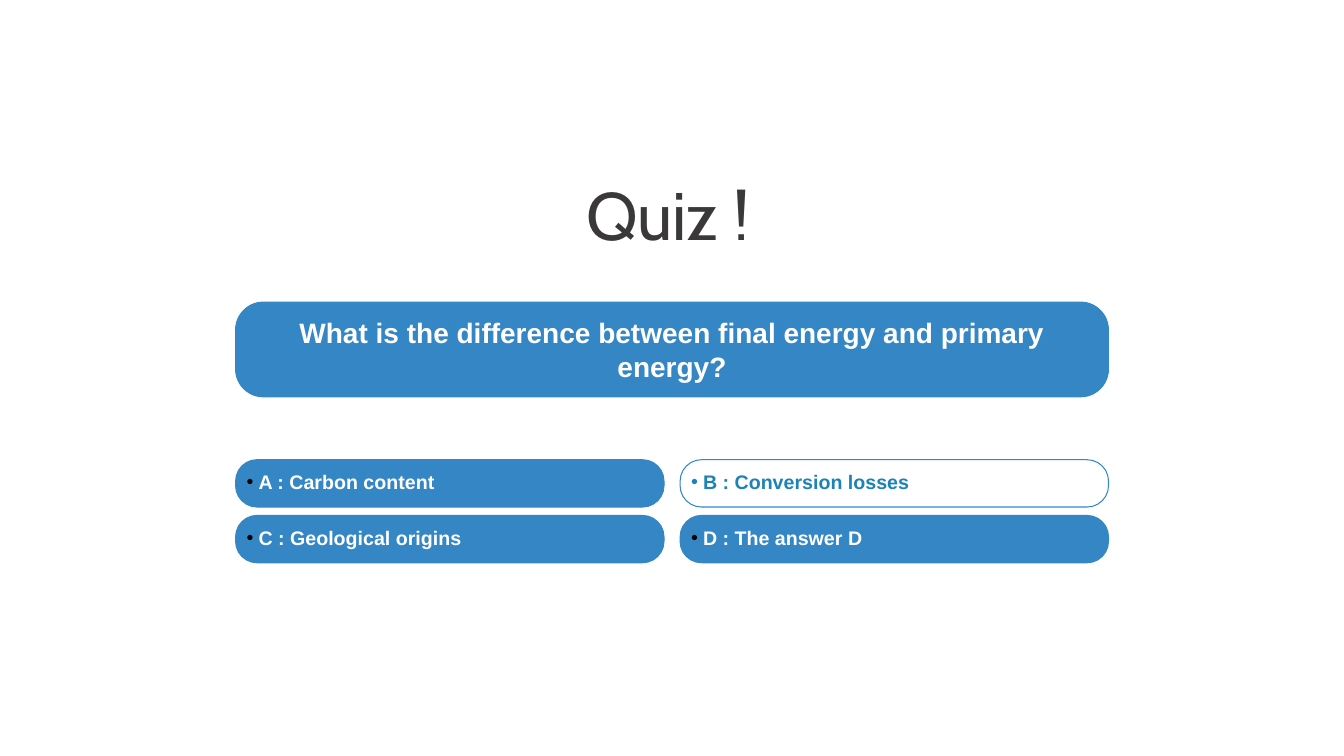
from lxml import etree
from pptx import Presentation
from pptx.dml.color import RGBColor
from pptx.enum.shapes import MSO_SHAPE
from pptx.enum.text import MSO_ANCHOR, PP_ALIGN
from pptx.oxml.ns import qn
from pptx.util import Pt

ROUNDED = MSO_SHAPE.ROUNDED_RECTANGLE
MIDDLE, CENTER = MSO_ANCHOR.MIDDLE, PP_ALIGN.CENTER

TITLE = "Quiz !"
QUESTION = "What is the difference between final energy and primary energy?"
ANSWERS = [
    ["A : Carbon content", "B : Conversion losses"],
    ["C : Geological origins", "D : The answer D"],
]
CORRECT = "B : Conversion losses"

BLUE, DEEP_BLUE, WHITE, BLACK, GREY = "3486C5", "1C82B8", "FFFFFF", "000000", "3A3838"

# All lengths are in points
LEFT, WIDTH = 168.3, 623.5
TITLE_LEFT, TITLE_TOP, TITLE_HEIGHT = 165.5, 113.8, 77
QUESTION_TOP, QUESTION_HEIGHT = 215.8, 67.7
ANSWERS_TOP, ANSWER_WIDTH, ANSWER_HEIGHT = 328.4, 306, 33.8
COLUMN_STEP, ROW_STEP = 317.5, 39.8
LABEL_DX, LABEL_DY, LABEL_WIDTH, LABEL_HEIGHT = 0.8, 3.8, 294, 28.8
BULLET_INDENT = 8.5


def color(hex_code):
    return RGBColor.from_string(hex_code)


def add_panel(slide, box, fill, rounding):
    panel = slide.shapes.add_shape(ROUNDED, *map(Pt, box))
    panel.adjustments[0] = rounding
    panel.shadow.inherit = False
    panel.fill.solid()
    panel.fill.fore_color.rgb = color(fill)
    panel.line.color.rgb = color(BLUE)
    panel.line.width = Pt(0.75)
    return panel


def write(shape, text, size, text_color, font="Arial", bold=True):
    """Fill the shape's first paragraph and return that paragraph."""
    shape.text_frame.word_wrap = True
    paragraph = shape.text_frame.paragraphs[0]
    run = paragraph.add_run()
    run.text = text
    run.font.name, run.font.size, run.font.bold = font, Pt(size), bold
    run.font.color.rgb = color(text_color)
    return paragraph


def add_bullet(paragraph, bullet_color):
    properties = paragraph._p.get_or_add_pPr()
    properties.set("marL", str(Pt(BULLET_INDENT)))
    properties.set("indent", str(-Pt(BULLET_INDENT)))
    tint = etree.SubElement(properties, qn("a:buClr"))
    etree.SubElement(tint, qn("a:srgbClr"), val=bullet_color)
    etree.SubElement(properties, qn("a:buFont"), typeface="Arial")
    etree.SubElement(properties, qn("a:buChar"), char="•")


def add_answer(slide, text, row, column):
    left = LEFT + column * COLUMN_STEP
    top = ANSWERS_TOP + row * ROW_STEP
    correct = text == CORRECT
    add_panel(slide, (left, top, ANSWER_WIDTH, ANSWER_HEIGHT),
              WHITE if correct else BLUE, 0.453)
    label_box = (left + LABEL_DX, top + LABEL_DY, LABEL_WIDTH, LABEL_HEIGHT)
    label = slide.shapes.add_textbox(*map(Pt, label_box))
    paragraph = write(label, text, 14, DEEP_BLUE if correct else WHITE)
    add_bullet(paragraph, DEEP_BLUE if correct else BLACK)


def main():
    deck = Presentation()
    deck.slide_width, deck.slide_height = Pt(960), Pt(540)
    slide = deck.slides.add_slide(deck.slide_layouts[6])

    title_box = (TITLE_LEFT, TITLE_TOP, WIDTH, TITLE_HEIGHT)
    title = slide.shapes.add_textbox(*map(Pt, title_box))
    title.text_frame.vertical_anchor = MIDDLE
    write(title, TITLE, 48, GREY, "Cabin", bold=False).alignment = CENTER

    question = add_panel(slide, (LEFT, QUESTION_TOP, WIDTH, QUESTION_HEIGHT), BLUE, 0.294)
    question.text_frame.vertical_anchor = MIDDLE
    write(question, QUESTION, 20, WHITE).alignment = CENTER

    for row, answers in enumerate(ANSWERS):
        for column, answer in enumerate(answers):
            add_answer(slide, answer, row, column)

    deck.save("out.pptx")


if __name__ == "__main__":
    main()
